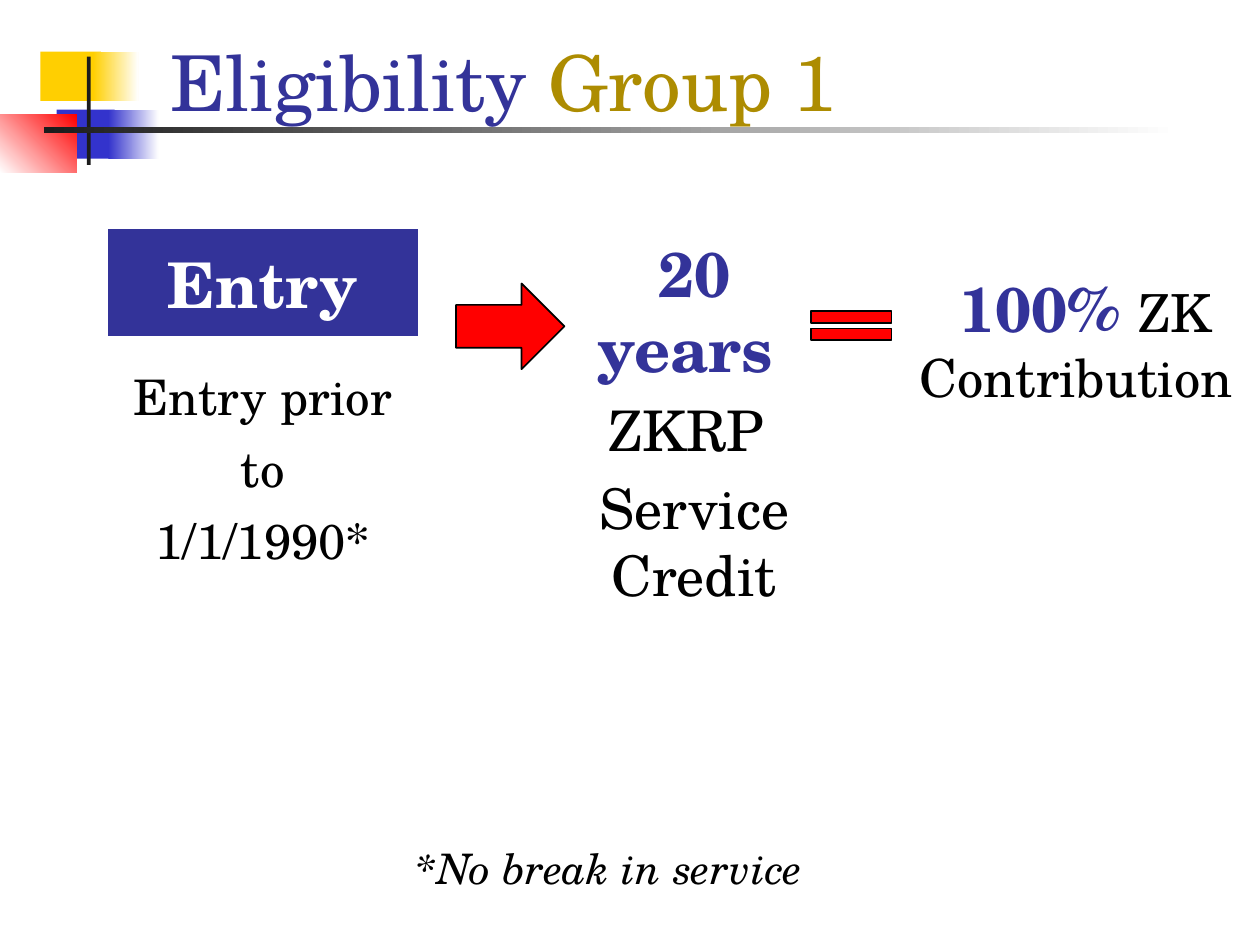
from pptx import Presentation
from pptx.dml.color import RGBColor
from pptx.enum.shapes import MSO_SHAPE
from pptx.enum.text import MSO_ANCHOR, MSO_AUTO_SIZE, PP_ALIGN
from pptx.util import Inches, Pt

RECTANGLE, ARROW, EQUALS = (
    MSO_SHAPE.RECTANGLE, MSO_SHAPE.RIGHT_ARROW, MSO_SHAPE.MATH_EQUAL)
LEFT, CENTER = PP_ALIGN.LEFT, PP_ALIGN.CENTER
TOP, BOTTOM = MSO_ANCHOR.TOP, MSO_ANCHOR.BOTTOM

FONT = "TeX Gyre Schola"
WHITE = RGBColor(0xFF, 0xFF, 0xFF)
BLACK = RGBColor(0x00, 0x00, 0x00)
CHARCOAL = RGBColor(0x1C, 0x1C, 0x1C)
YELLOW = RGBColor(0xFF, 0xCF, 0x01)
BLUE = RGBColor(0x33, 0x33, 0xCC)
RED = RGBColor(0xFF, 0x00, 0x00)
NAVY = RGBColor(0x33, 0x33, 0x99)
GOLD = RGBColor(0xAD, 0x8C, 0x01)

# Decoration: left, top, width, height, colours (two make a gradient), angle
DECORATION = [
    (0.32, 0.41, 0.48, 0.39, [YELLOW], 0),
    (0.74, 0.41, 0.36, 0.39, [YELLOW, WHITE], 0),
    (0.45, 0.87, 0.46, 0.39, [BLUE], 0),
    (0.86, 0.87, 0.40, 0.39, [BLUE, WHITE], 0),
    (0, 0.91, 0.61, 0.46, [WHITE, RED], 45),
    (0.69, 0.45, 0.03, 0.86, [CHARCOAL], 0),
    (0.35, 1.01, 9, 0.05, [CHARCOAL, WHITE], 0),
]
SYMBOLS = [(ARROW, 3.62, 2.25, 0.86, 0.68), (EQUALS, 6.32, 2.39, 0.87, 0.39)]

# Text: paragraphs, each a list of (words, format) spans
STRONG = {"size": Pt(36), "bold": True}
TITLE = [[("Eligibility ", {"size": Pt(44), "color": NAVY}),
          ("Group 1", {"size": Pt(44), "color": GOLD})]]
SERVICE = [[("20 years ", {**STRONG, "color": NAVY})],
           [("ZKRP ", {"size": Pt(32)})],
           [("Service Credit", {"size": Pt(32)})]]
RESULT = [[(" 100% ", {**STRONG, "color": NAVY}),
           ("ZK Contribution", {"size": Pt(30)})]]
FOOTNOTE = [[("*No break in service", {"size": Pt(24), "italic": True})]]

# Entry table rows: height, top margin, fill, paragraphs
ENTRY_AT = (0.85, 1.81, 2.47, 2.86)
ENTRY_ROWS = [
    (0.86, 0.05, NAVY, [[("Entry", {**STRONG, "color": WHITE})]]),
    (2, 0.19, None, [[("Entry prior to\n1/1/1990*", {"size": Pt(28)})]]),
]


def inches(values):
    return [Inches(value) for value in values]


def add_span(para, words, formats):
    span = para.add_run()
    span.text = words
    style = {"name": FONT, "bold": False, "color": BLACK, **formats}
    span.font.color.rgb = style.pop("color")
    for name, value in style.items():
        setattr(span.font, name, value)


def write(frame, paragraphs, align=CENTER, before=0.2):
    """Fill a text frame; before is a share of the first span's size."""
    frame.word_wrap = True
    for index, spans in enumerate(paragraphs):
        para = frame.paragraphs[0] if index == 0 else frame.add_paragraph()
        para.alignment = align
        para.space_before = Pt(round(spans[0][1]["size"].pt * before))
        for words, formats in spans:
            for number, line in enumerate(words.split("\n")):
                if number:
                    para.add_line_break()
                add_span(para, line, formats)


def add_shape(page, kind, place, colors, angle=0, outline=None):
    shape = page.shapes.add_shape(kind, *inches(place))
    shape.shadow.inherit = False
    if len(colors) == 1:
        shape.fill.solid()
        shape.fill.fore_color.rgb = colors[0]
    else:
        shape.fill.gradient()
        shape.fill.gradient_angle = angle
        for position, (stop, color) in enumerate(
                zip(shape.fill.gradient_stops, colors)):
            stop.position = position
            stop.color.rgb = color
    if outline is None:
        shape.line.fill.background()
    else:
        shape.line.color.rgb = outline
        shape.line.width = Pt(1)


def add_text(page, place, paragraphs, **layout):
    box = page.shapes.add_textbox(*inches(place))
    write(box.text_frame, paragraphs, **layout)
    return box


def add_entry_table(page):
    table = page.shapes.add_table(
        len(ENTRY_ROWS), 1, *inches(ENTRY_AT)).table
    table.first_row = table.horz_banding = False
    for index, (height, margin, fill, paragraphs) in enumerate(ENTRY_ROWS):
        table.rows[index].height = Inches(height)
        cell = table.cell(index, 0)
        cell.margin_top = Inches(margin)
        cell.vertical_anchor = TOP
        if fill is None:
            cell.fill.background()
        else:
            cell.fill.solid()
            cell.fill.fore_color.rgb = fill
        write(cell.text_frame, paragraphs, before=0)


def main():
    deck = Presentation()
    deck.slide_width, deck.slide_height = Inches(10), Inches(7.5)
    page = deck.slides.add_slide(deck.slide_layouts[5])

    for *place, colors, angle in DECORATION:
        add_shape(page, RECTANGLE, place, colors, angle)

    title = page.shapes.title
    title.left, title.top, title.width, title.height = inches(
        (1.25, 0.24, 8.52, 0.82))
    title.text_frame.auto_size = MSO_AUTO_SIZE.NONE
    title.text_frame.vertical_anchor = BOTTOM
    write(title.text_frame, TITLE, align=LEFT, before=0)

    add_text(page, (4.48, 1.81, 2.06, 1.93), SERVICE)
    add_entry_table(page)
    for kind, *place in SYMBOLS:
        add_shape(page, kind, place, [RED], outline=BLACK)
    add_text(page, (7.19, 2.09, 2.7, 1.93), RESULT)
    footnote = add_text(page, (2.66, 6.64, 4.35, 0.5), FOOTNOTE, before=0.25)
    footnote.text_frame.auto_size = MSO_AUTO_SIZE.SHAPE_TO_FIT_TEXT

    deck.save("out.pptx")


if __name__ == "__main__":
    main()
